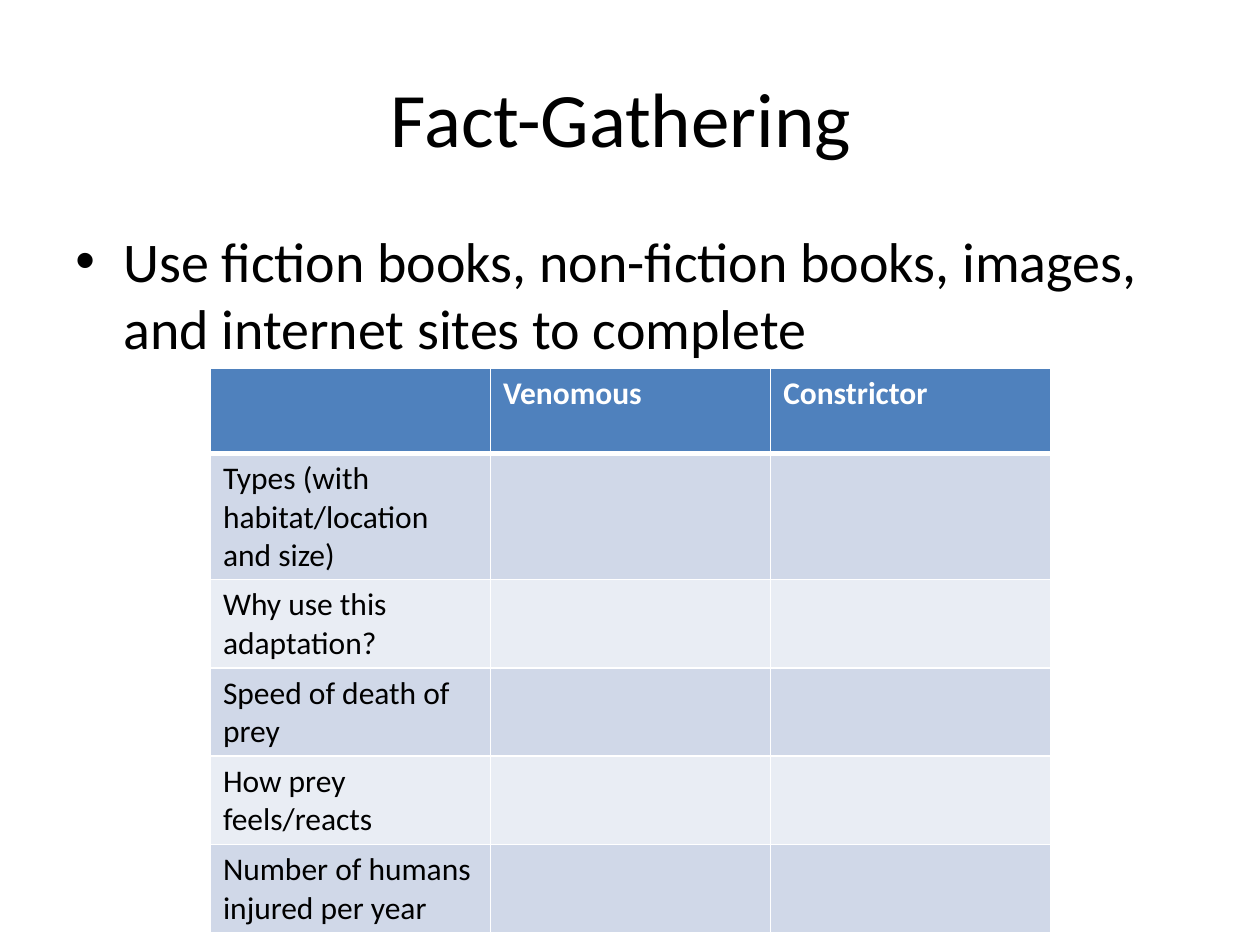
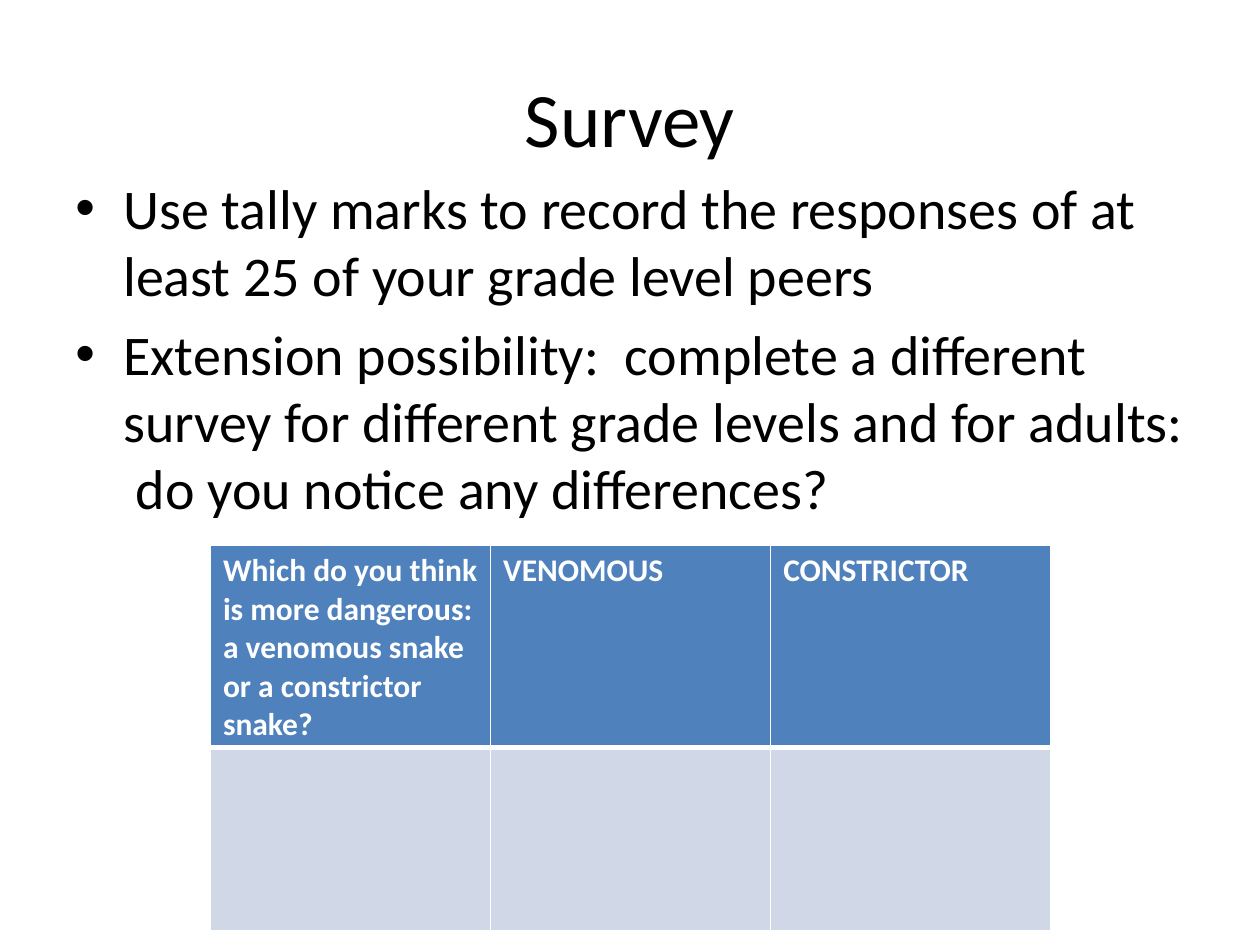
from lxml.etree import SubElement
from pptx import Presentation
from pptx.dml.color import RGBColor
from pptx.enum.text import MSO_ANCHOR, PP_ALIGN
from pptx.oxml.ns import qn
from pptx.util import Inches, Pt

FONT = "Calibri"
BLACK = RGBColor(0x00, 0x00, 0x00)
WHITE = RGBColor(0xFF, 0xFF, 0xFF)
BLUE = RGBColor(0x4F, 0x81, 0xBD)
BANDS = [RGBColor(0xD0, 0xD8, 0xE8), RGBColor(0xE9, 0xED, 0xF4)]

LEFT, WIDTH = 0.5, 9
GRID_LEFT, GRID_WIDTH = 1.67, 6.67
INDENT = Inches(0.38)

FACTS = [
    ["", "Venomous", "Constrictor"],
    ["Types (with habitat/location and size)", "", ""],
    ["Why use this adaptation?", "", ""],
    ["Speed of death of prey", "", ""],
    ["How prey feels/reacts", "", ""],
    ["Number of humans injured per year", "", ""],
]
SURVEY = [
    ["Which do you think is more dangerous: a venomous snake or a constrictor snake?",
     "VENOMOUS", "CONSTRICTOR"],
    ["", "", ""],
]


def put_text(par, text, size=18, color=BLACK, bold=False, align=PP_ALIGN.LEFT):
    par.alignment = align
    run = par.add_run()
    run.text = text
    run.font.name = FONT
    run.font.size = Pt(size)
    run.font.bold = bold
    run.font.color.rgb = color


def add_frame(slide, top, height, anchor=MSO_ANCHOR.TOP):
    box = slide.shapes.add_textbox(Inches(LEFT), Inches(top), Inches(WIDTH), Inches(height))
    frame = box.text_frame
    frame.word_wrap = True
    frame.vertical_anchor = anchor
    return frame


def add_title(slide, text):
    frame = add_frame(slide, 0.3, 1.25, MSO_ANCHOR.MIDDLE)
    put_text(frame.paragraphs[0], text, size=44, align=PP_ALIGN.CENTER)


def set_bullet(par):
    props = par._p.get_or_add_pPr()
    props.set("marL", str(INDENT))
    props.set("indent", str(-INDENT))
    SubElement(props, qn("a:buFont"), typeface="Arial")
    SubElement(props, qn("a:buChar"), char="•")


def add_list(slide, top, height, items):
    frame = add_frame(slide, top, height)
    for i, item in enumerate(items):
        par = frame.add_paragraph() if i else frame.paragraphs[0]
        par.space_before = Pt(6.4)
        set_bullet(par)
        put_text(par, item, size=32)


def set_edges(cell, top, bottom):
    """Draw white cell borders; top and bottom are widths in points."""
    props = cell._tc.get_or_add_tcPr()
    for side, width in zip("LRTB", (1, 1, top, bottom)):
        line = SubElement(props, qn(f"a:ln{side}"), w=str(Pt(width)))
        fill = SubElement(line, qn("a:solidFill"))
        SubElement(fill, qn("a:srgbClr"), val=str(WHITE))


def add_grid(slide, top, row_height, data):
    rows, cols = len(data), len(data[0])
    table = slide.shapes.add_table(
        rows, cols, Inches(GRID_LEFT), Inches(top),
        Inches(GRID_WIDTH), Inches(row_height * rows)).table
    for r, texts in enumerate(data):
        head = r == 0
        for c, text in enumerate(texts):
            cell = table.cell(r, c)
            set_edges(cell, top=3 if r == 1 else 1, bottom=3 if head else 1)
            cell.fill.solid()
            cell.fill.fore_color.rgb = BLUE if head else BANDS[(r - 1) % 2]
            if text:
                put_text(cell.text_frame.paragraphs[0], text,
                         color=WHITE if head else BLACK, bold=head)


def add_slide(deck, title):
    slide = deck.slides.add_slide(deck.slide_layouts[6])
    slide.background.fill.solid()
    slide.background.fill.fore_color.rgb = WHITE
    add_title(slide, title)
    return slide


def main():
    deck = Presentation()
    deck.slide_width, deck.slide_height = Inches(10), Inches(7.5)

    facts = add_slide(deck, "Fact-Gathering ")
    add_list(facts, 1.75, 4.95, [
        "Use fiction books, non-fiction books, images, and internet sites to complete"])
    add_grid(facts, 2.92, 0.68, FACTS)

    survey = add_slide(deck, "Survey")
    add_list(survey, 1.33, 5.37, [
        "Use tally marks to record the responses of at least 25 of your grade level peers",
        "Extension possibility:  complete a different survey for different grade levels "
        "and for adults:  do you notice any differences?"])
    add_grid(survey, 4.33, 1.46, SURVEY)

    deck.save("out.pptx")


if __name__ == "__main__":
    main()
